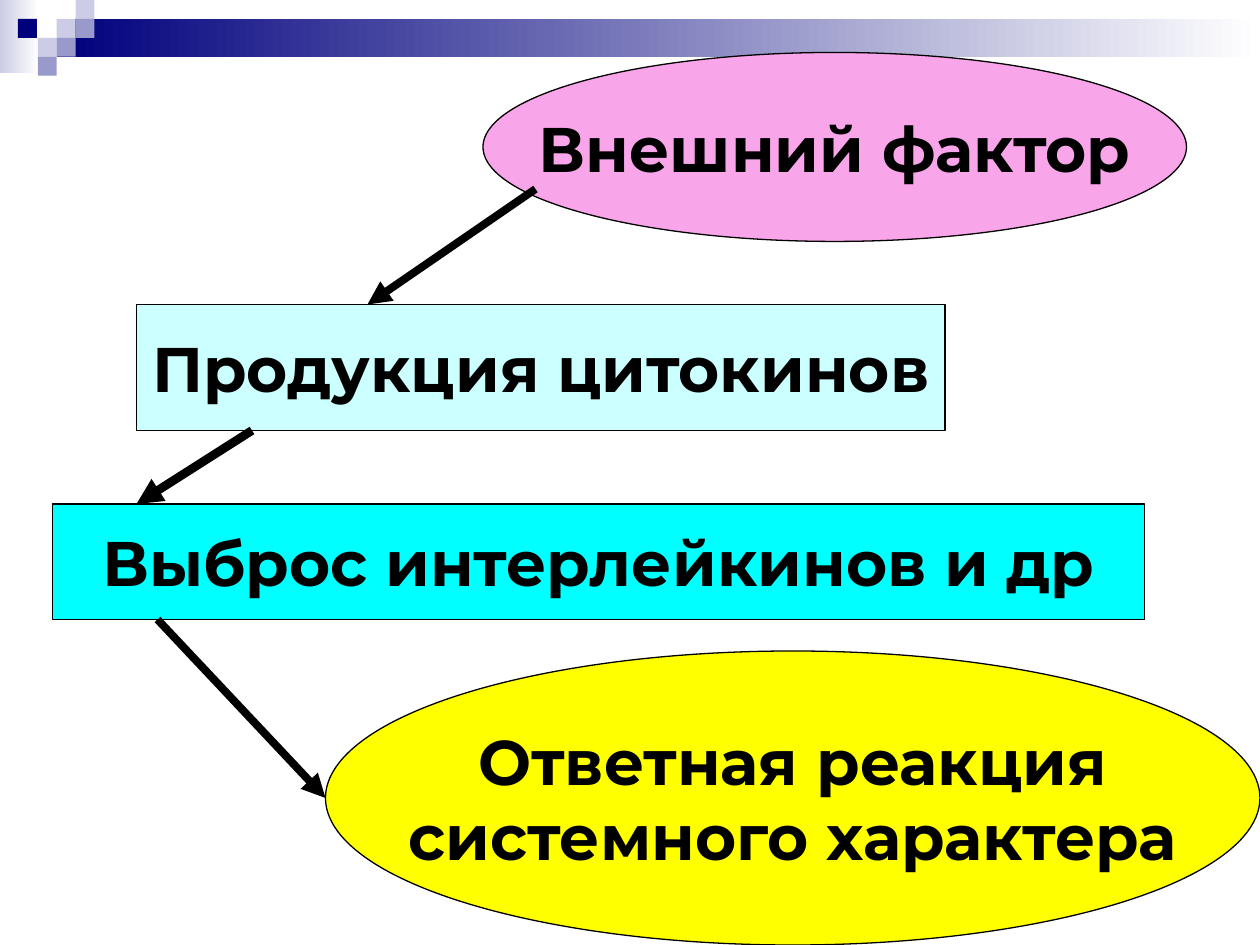
from lxml import etree
from pptx import Presentation
from pptx.dml.color import RGBColor
from pptx.enum.shapes import MSO_CONNECTOR, MSO_SHAPE
from pptx.enum.text import MSO_ANCHOR, PP_ALIGN
from pptx.oxml.ns import qn
from pptx.util import Inches, Pt

WIDTH, HEIGHT = 10, 7.5
UNIT = WIDTH / 120  # the diagram sits on a grid of 120 columns by 90 rows
TILE = 0.15  # side of one square of the header ornament, inches
BLACK, NAVY, LILAC, PALE, WHITE = "000000", "00007D", "9999CC", "CCCCE6", "FFFFFF"

# text, preset, fill, (column, row, columns, rows)
STEPS = [
    ("Внешний фактор", MSO_SHAPE.OVAL, "F9A5E9", (46, 5, 67, 18)),
    ("Продукция цитокинов", MSO_SHAPE.RECTANGLE, "CCFFFF", (13, 29, 77, 12)),
    ("Выброс интерлейкинов и др", MSO_SHAPE.RECTANGLE, "00FFFF", (5, 48, 104, 11)),
    ("Ответная реакция\nсистемного характера", MSO_SHAPE.OVAL, "FFFF00",
     (31, 62, 89, 28)),
]
# start (column, row), end (column, row), line width in points
ARROWS = [
    ((24, 41), (13, 48), 5),
    ((15, 59), (31, 76), 4.5),
    ((51, 18), (35, 29), 4.5),
]
# column, row, fill
TILES = [(3, 1, PALE), (4, 0, PALE), (4, 1, LILAC), (2, 2, PALE),
         (0.95, 1, NAVY), (3, 2, LILAC), (2, 3, LILAC)]


def color(hex_code):
    return RGBColor.from_string(hex_code)


def grid(values, step=UNIT):
    return [Inches(value * step) for value in values]


def add_block(slide, preset, box, fill, fade_to=None, line=None):
    """Add a shape with a solid fill, or one that fades from left to right."""
    block = slide.shapes.add_shape(preset, *box)
    block.shadow.inherit = False
    if fade_to:
        block.fill.gradient()
        block.fill.gradient_angle = 0
        for stop, hex_code, position in zip(
                block.fill.gradient_stops, (fill, fade_to), (0, 1)):
            stop.color.rgb = color(hex_code)
            stop.position = position
    else:
        block.fill.solid()
        block.fill.fore_color.rgb = color(fill)
    if line:
        block.line.color.rgb = color(line)
        block.line.width = Pt(0.75)
    else:
        block.line.fill.background()
    return block


def write(block, text, size=36, bold=True, font="Montserrat", hex_code=BLACK,
          align=PP_ALIGN.CENTER):
    frame = block.text_frame
    frame.text = text
    frame.word_wrap = False
    frame.vertical_anchor = MSO_ANCHOR.MIDDLE
    for paragraph in frame.paragraphs:
        paragraph.alignment = align
        for run in paragraph.runs:
            run.font.name = font
            run.font.size = Pt(size)
            run.font.bold = bold
            run.font.color.rgb = color(hex_code)


def add_arrow(slide, start, end, width):
    arrow = slide.shapes.add_connector(MSO_CONNECTOR.STRAIGHT, *grid(start + end))
    arrow.line.color.rgb = color(BLACK)
    arrow.line.width = Pt(width)
    etree.SubElement(arrow.line._get_or_add_ln(), qn("a:tailEnd"), type="triangle")
    etree.SubElement(arrow._element.spPr, qn("a:effectLst"))


def add_header(slide):
    square = MSO_SHAPE.RECTANGLE
    add_block(slide, square, grid((0, 0, 0.31, 0.58), 1), PALE, fade_to=WHITE)
    bar = (3, 1, WIDTH / TILE - 3, 2)
    add_block(slide, square, grid(bar, TILE), NAVY, fade_to=WHITE)
    for column, row, fill in TILES:
        add_block(slide, square, grid((column, row, 1, 1), TILE), fill)


def add_diagram(slide):
    for text, preset, fill, cells in STEPS:
        write(add_block(slide, preset, grid(cells), fill, line=BLACK), text)
    for start, end, width in ARROWS:
        add_arrow(slide, start, end, width)


def main():
    deck = Presentation()
    deck.slide_width, deck.slide_height = Inches(WIDTH), Inches(HEIGHT)
    slide = deck.slides.add_slide(deck.slide_layouts[6])
    add_header(slide)
    add_diagram(slide)
    deck.save("out.pptx")


if __name__ == "__main__":
    main()
